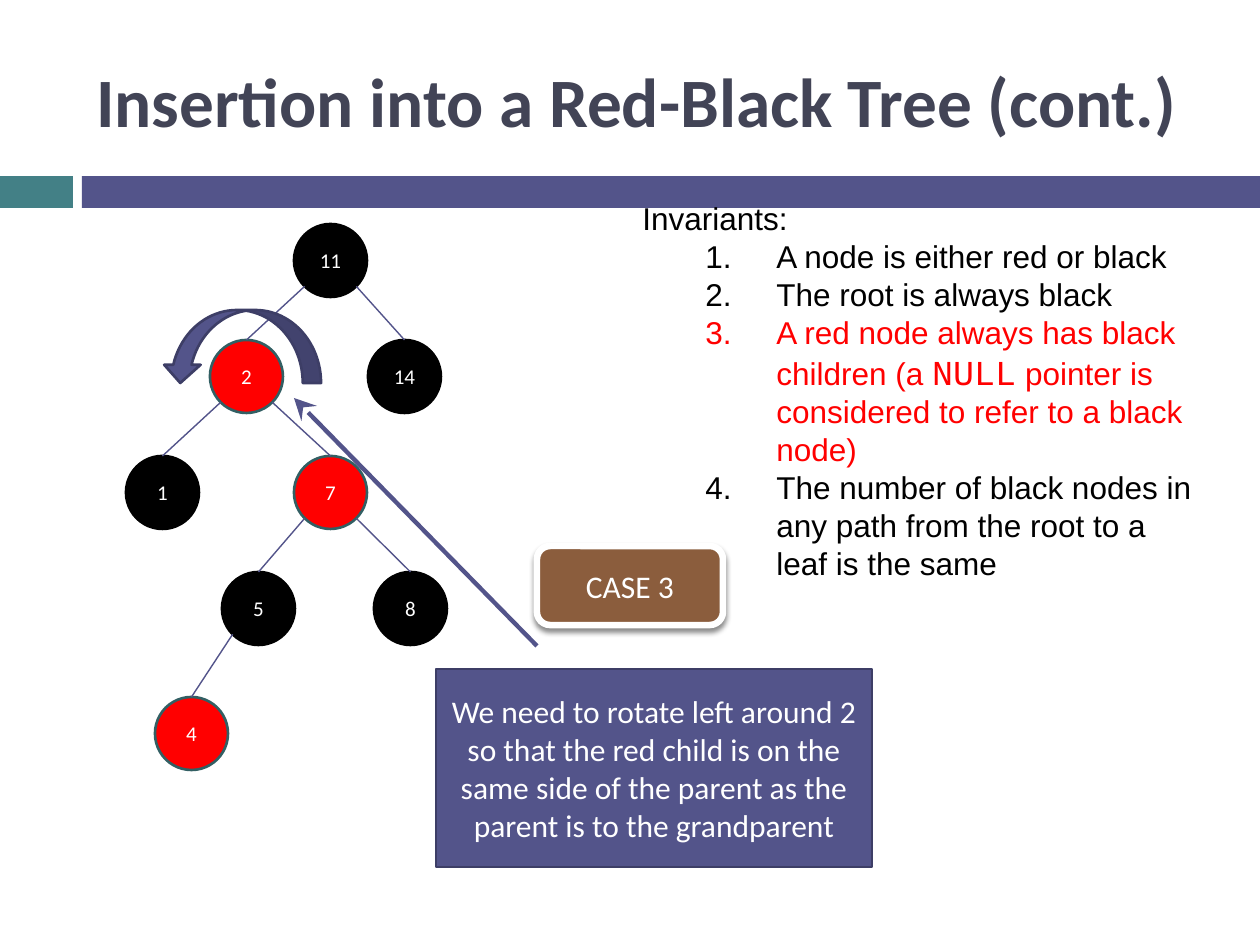
from dataclasses import dataclass
from math import sqrt

from lxml import etree
from pptx import Presentation
from pptx.dml.color import RGBColor
from pptx.enum.shapes import MSO_CONNECTOR, MSO_SHAPE
from pptx.enum.text import MSO_ANCHOR, PP_ALIGN
from pptx.oxml.ns import qn
from pptx.util import Pt

RECT, OVAL = MSO_SHAPE.RECTANGLE, MSO_SHAPE.OVAL
ROUND, CURVE = MSO_SHAPE.ROUNDED_RECTANGLE, MSO_SHAPE.CURVED_UP_ARROW
LINE = MSO_CONNECTOR.STRAIGHT
MIDDLE, CENTER = MSO_ANCHOR.MIDDLE, PP_ALIGN.CENTER


@dataclass(frozen=True)
class Theme:
    black: str = "000000"
    white: str = "FFFFFF"
    red: str = "FF0000"
    teal: str = "438086"
    rim: str = "325F63"
    blue: str = "53548A"
    navy: str = "3D3E66"
    slate: str = "424456"
    brown: str = "8B5D3D"
    sans: str = "Calibri"
    body: str = "Arial"
    mono: str = "Courier New"
    head: float = 39.6
    code: int = 20
    text: int = 18
    node: int = 12


T = Theme()
SCALE = 914400 / 126
SIZE = 73

TITLE = "Insertion into a Red-Black Tree (cont.)"
BARS = [((0, 176, 73, 32), T.teal), ((82, 176, 1178, 32), T.blue)]
RULES = [
    ([("A node is either red or black", False)], T.black),
    ([("The root is always black", False)], T.black),
    ([("A red node always has black children (a ", False), ("NULL", True),
      (" pointer is considered to refer to a black node)", False)], T.red),
    ([("The number of black nodes in any path from the root to a leaf is the same",
       False)], T.black),
]
NODES = {
    "11": (294, 224, False),
    "2": (210, 340, True),
    "14": (368, 340, False),
    "1": (126, 456, False),
    "7": (294, 456, True),
    "5": (222, 572, False),
    "8": (374, 572, False),
    "4": (155, 697, True),
}
EDGES = [("11", "2"), ("11", "14"), ("2", "1"), ("2", "7"),
         ("7", "5"), ("7", "8"), ("5", "4")]
NOTE = ("We need to rotate left around 2 so that the red child is on the "
        "same side of the parent as the parent is to the grandparent")


def px(n):
    return round(n * SCALE)


def rgb(code):
    return RGBColor.from_string(code)


def style(font, size, face, color, bold=False):
    font.size, font.name, font.bold = Pt(size), face, bold
    font.color.rgb = rgb(color)


def add_box(kind, box, fill, rim=None, wide=1.5, text="", size=T.text):
    shape = slide.shapes.add_shape(kind, *map(px, box))
    shape.fill.solid()
    shape.fill.fore_color.rgb = rgb(fill)
    if rim:
        shape.line.color.rgb = rgb(rim)
        shape.line.width = Pt(wide)
    else:
        shape.line.fill.background()
    shape.shadow.inherit = False
    if text:
        frame = shape.text_frame
        frame.vertical_anchor = MIDDLE
        para = frame.paragraphs[0]
        para.text, para.alignment = text, CENTER
        style(para.font, size, T.sans, T.white)
    return shape


def add_line(start, end, wide=0.79):
    line = slide.shapes.add_connector(LINE, *map(px, (*start, *end)))
    line.line.color.rgb = rgb(T.blue)
    line.line.width = Pt(wide)
    etree.SubElement(line._element.spPr, qn("a:effectLst"))
    return line


def add_text(box):
    frame = slide.shapes.add_textbox(*map(px, box)).text_frame
    frame.word_wrap = True
    return frame


def add_rule(frame, parts, color):
    para = frame.add_paragraph()
    para.level = 1
    props = para._p.get_or_add_pPr()
    props.set("marL", str(px(134)))
    props.set("indent", str(px(-71)))
    etree.SubElement(props, qn("a:buFont"), typeface="+mj-lt")
    etree.SubElement(props, qn("a:buAutoNum"), type="arabicPeriod")
    for words, code in parts:
        run = para.add_run()
        run.text = words
        face, size = (T.mono, T.code) if code else (T.body, T.text)
        style(run.font, size, face, color)


def add_edge(top, low):
    x, y, _ = NODES[top]
    end, drop, _ = NODES[low]
    half = SIZE / 2
    reach = half / sqrt(2)
    side = reach if end > x else -reach
    add_line((x + half + side, y + half + reach), (end + half, drop))


deck = Presentation()
deck.slide_width, deck.slide_height = px(1260), px(945)
slide = deck.slides.add_slide(deck.slide_layouts[6])

for box, fill in BARS:
    add_box(RECT, box, fill)

frame = add_text((84, 32, 1124, 136))
frame.vertical_anchor = MIDDLE
frame.text = TITLE
style(frame.paragraphs[0].font, T.head, T.sans, T.slate, True)

frame = add_text((630, 193, 577, 412))
frame.text = "Invariants:"
style(frame.paragraphs[0].font, T.text, T.body, T.black)
for parts, color in RULES:
    add_rule(frame, parts, color)

for name, (x, y, red) in NODES.items():
    fill, rim = (T.red, T.rim) if red else (T.black, T.black)
    add_box(OVAL, (x, y, SIZE, SIZE), fill, rim, text=name, size=T.node)
for top, low in EDGES:
    add_edge(top, low)

add_box(RECT, (436, 669, 436, 198), T.blue, T.navy, text=NOTE)
turn = add_box(CURVE, (162, 310, 159, 73), T.blue, T.navy)
turn.rotation = 180

case = add_box(ROUND, (537, 546, 186, 79), T.brown, T.white, 3.75, "CASE 3")
glow = etree.SubElement(
    case._element.spPr.find(qn("a:effectLst")), qn("a:outerShdw"),
    blurRad=str(Pt(3)), dist=str(Pt(2.4)), dir="5400000", rotWithShape="0")
tint = etree.SubElement(glow, qn("a:srgbClr"), val=T.black)
etree.SubElement(tint, qn("a:alpha"), val="45000")

point = add_line((294, 398), (537, 646), 2.5)
etree.SubElement(point.line._get_or_add_ln(), qn("a:headEnd"), type="stealth",
                 w="lg", len="lg")

deck.save("out.pptx")
